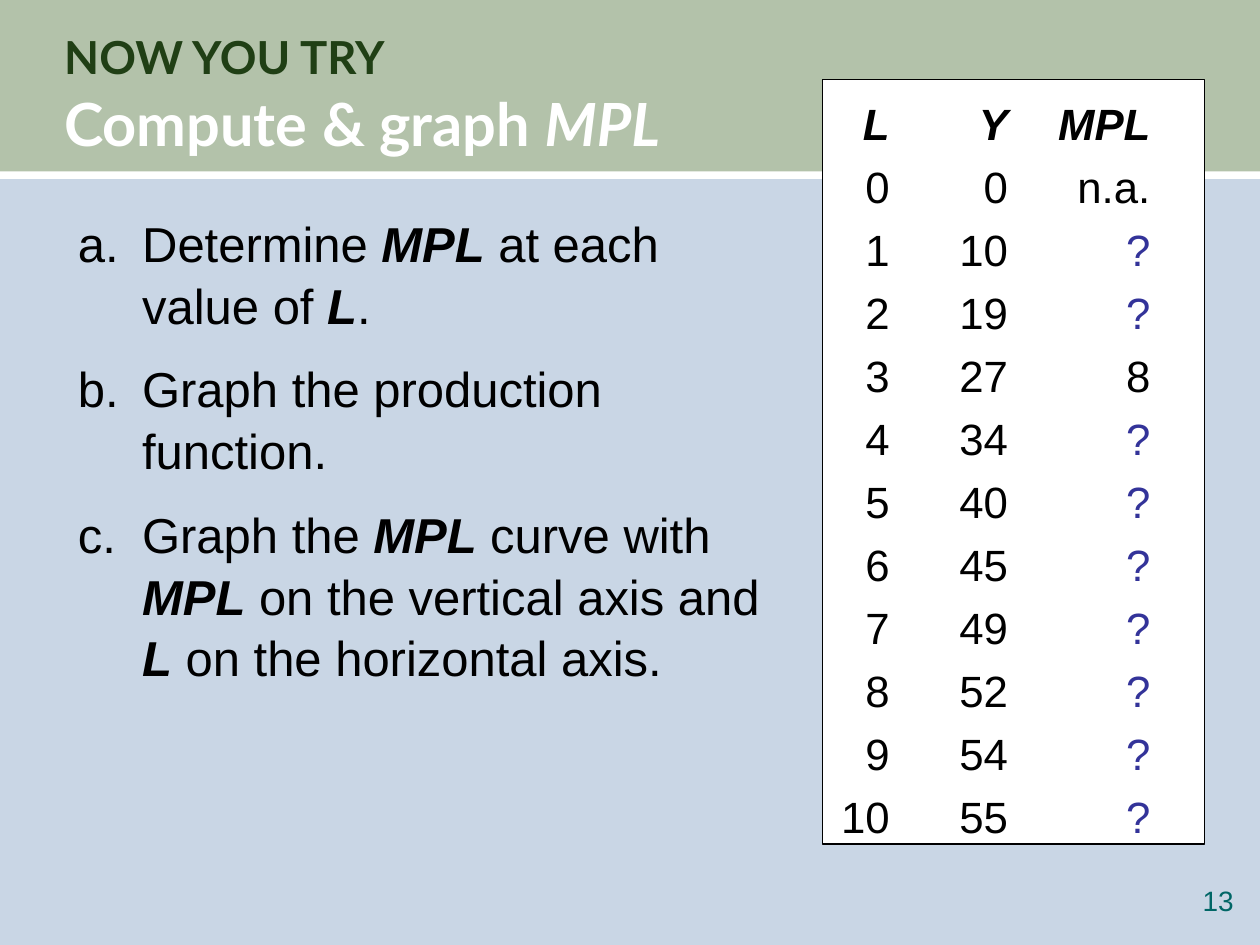
"""Build the exercise slide on computing and graphing the marginal product of labour."""
from dataclasses import dataclass, field

from lxml import etree
from pptx import Presentation
from pptx import util as u
from pptx.dml.color import RGBColor
from pptx.enum import shapes, text
from pptx.oxml.ns import qn

COLUMNS, ROWS = 100, 75
CELL = u.Inches(0.1)
COLORS = {
    "background": "C9D6E5", "band": "B3C2AA", "white": "FFFFFF", "black": "000000",
    "kicker": "203F15", "unknown": "333399", "number": "006666",
}
EMPHASIS = {"bold": True, "italic": True}
NO_MARGINS = {f"margin_{side}": 0 for side in ("left", "top", "right", "bottom")}
NO_STYLE_NO_GRID = "{2D5ABB26-0587-4C30-8999-92F81FD0307C}"


@dataclass(frozen=True)
class Area:
    left: float
    top: float
    width: float
    height: float

    def lengths(self) -> list[int]:
        return [round(cells * CELL) for cells in (self.left, self.top, self.width, self.height)]


@dataclass(frozen=True)
class Style:
    size: float
    color: str
    font: str = "Arial"
    bold: bool = False


@dataclass(frozen=True)
class Line:
    style: Style
    phrases: list
    emphasis: dict = field(default_factory=lambda: EMPHASIS)


KICKER = Style(26, "kicker", "Lato", True)
HEADING = Style(34, "white", "Lato", True)
TASK = Style(28, "black")
VALUE = Style(25, "black")
UNKNOWN = Style(25, "unknown")
PAGE = Style(16, "number")

TITLE = [
    Line(KICKER, ["NOW YOU TRY"]),
    Line(HEADING, ["Compute & graph ", "MPL"], {"italic": True}),
]
TASKS = [
    Line(TASK, ["Determine ", "MPL", " at each value of ", "L", "."]),
    Line(TASK, ["Graph the production function."]),
    Line(TASK, ["Graph the ", "MPL", " curve with ", "MPL", " on the vertical axis and ",
                "L", " on the horizontal axis."]),
]
HEADER = ["L", "Y", "MPL"]
OUTPUT = [0, 10, 19, 27, 34, 40, 45, 49, 52, 54, 55]
KNOWN_MPL = {0: "n.a.", 3: "8"}
COLUMN_WIDTHS = [4.6, 9.4, 11.3]
ROW_HEIGHT = 5


def rgb(name: str) -> RGBColor:
    return RGBColor.from_string(COLORS[name])


def apply(target, values: dict) -> None:
    for name, value in values.items():
        setattr(target, name, value)


def write(paragraph, line: Line) -> None:
    """Write the phrases in turn, with every second one emphasised."""
    style = line.style
    values = {"size": u.Pt(style.size), "name": style.font, "bold": style.bold, "italic": False}
    for index, phrase in enumerate(line.phrases):
        run = paragraph.add_run()
        run.text = phrase
        apply(run.font, values | (line.emphasis if index % 2 else {}))
        run.font.color.rgb = rgb(style.color)


def add_rectangle(slide, area: Area, fill: str, outline: str = "") -> None:
    rectangle = slide.shapes.add_shape(shapes.MSO_SHAPE.RECTANGLE, *area.lengths())
    rectangle.shadow.inherit = False
    rectangle.fill.solid()
    rectangle.fill.fore_color.rgb = rgb(fill)
    if outline:
        rectangle.line.color.rgb = rgb(outline)
        rectangle.line.width = u.Pt(0.75)
    else:
        rectangle.line.fill.background()


def add_text(slide, area: Area, lines: list[Line], frame_format: dict, paragraph_format: dict) -> list:
    frame = slide.shapes.add_textbox(*area.lengths()).text_frame
    apply(frame, {"word_wrap": True} | frame_format)
    for index, line in enumerate(lines):
        paragraph = frame.add_paragraph() if index else frame.paragraphs[0]
        apply(paragraph, paragraph_format)
        write(paragraph, line)
    return list(frame.paragraphs)


def number_with_letters(paragraphs: list) -> None:
    indent = u.Inches(0.51)
    for paragraph in paragraphs:
        properties = paragraph._p.get_or_add_pPr()
        properties.set("marL", str(indent))
        properties.set("indent", str(-indent))
        bullet_font = etree.SubElement(properties, qn("a:buFont"))
        bullet_font.set("typeface", "Arial")
        etree.SubElement(properties, qn("a:buAutoNum")).set("type", "alphaLcPeriod")


def add_production_table(slide, left: float, top: float) -> None:
    body = [[str(labor), str(output), KNOWN_MPL.get(labor, "?")] for labor, output in enumerate(OUTPUT)]
    content = [HEADER, *body]
    area = Area(left, top, sum(COLUMN_WIDTHS), ROW_HEIGHT * len(content))
    table = slide.shapes.add_table(len(content), len(HEADER), *area.lengths()).table
    apply(table, {"first_row": False, "horz_banding": False})
    table._tbl.tblPr.find(qn("a:tableStyleId")).text = NO_STYLE_NO_GRID
    for column, width in zip(table.columns, COLUMN_WIDTHS):
        column.width = round(width * CELL)
    for row, values in zip(table.rows, content):
        for cell, value in zip(row.cells, values):
            cell.fill.background()
            apply(cell, NO_MARGINS | {"vertical_anchor": text.MSO_ANCHOR.BOTTOM})
            paragraph = cell.text_frame.paragraphs[0]
            paragraph.alignment = text.PP_ALIGN.RIGHT
            write(paragraph, Line(UNKNOWN if value == "?" else VALUE, [value]))
            if values is HEADER:
                apply(paragraph.runs[0].font, EMPHASIS)


def main() -> None:
    deck = Presentation()
    apply(deck, {"slide_width": COLUMNS * CELL, "slide_height": ROWS * CELL})
    slide = deck.slides.add_slide(deck.slide_layouts[6])
    slide.background.fill.solid()
    slide.background.fill.fore_color.rgb = rgb("background")

    add_rectangle(slide, Area(0, 0, COLUMNS, 14), "band")
    add_text(slide, Area(5.1, 2.2, 90.2, 10.3), TITLE,
             NO_MARGINS | {"vertical_anchor": text.MSO_ANCHOR.MIDDLE}, {"line_spacing": 1.05})
    add_rectangle(slide, Area(0, 13.6, COLUMNS, 0.6), "white")
    add_text(slide, Area(92.4, 70.1, 5.5, 3.2), [Line(PAGE, ["13"])],
             NO_MARGINS, {"alignment": text.PP_ALIGN.RIGHT})
    tasks = add_text(slide, Area(5.2, 16.2, 57.1, 50.8), TASKS, {},
                     {"line_spacing": 1.05, "space_before": u.Pt(12.6)})
    number_with_letters(tasks)
    add_rectangle(slide, Area(65.3, 6.3, 30.3, 60.7), "white", "black")
    add_production_table(slide, 66, 6.9)
    deck.save("out.pptx")


if __name__ == "__main__":
    main()
